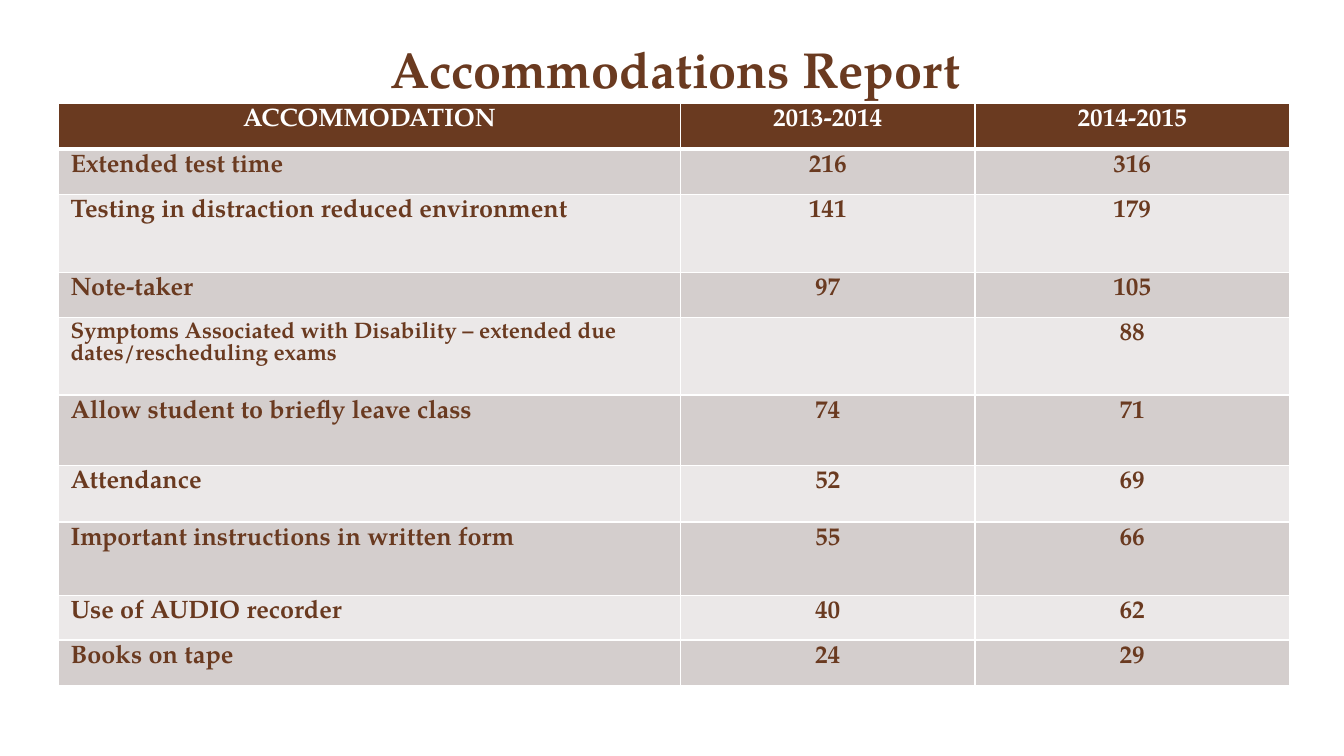
import pptx
import pptx.util
import pptx.dml.color
import pptx.enum.text
import pptx.oxml
import pptx.oxml.ns

PX = 9144  # 100 px to the inch
FONT = "TeX Gyre Pagella"
HUES = {"brown": "6A3A20", "white": "FFFFFF", "dark": "D4CECD", "light": "EBE8E8"}
ALIGN = pptx.enum.text.PP_ALIGN

COLS = [617, 292, 312]
# Row height, then the three cells
ROWS = [
    (45, "ACCOMMODATION", "2013-2014", "2014-2015"),
    (45, "Extended test time", "216", "316"),
    (77, "Testing in distraction reduced environment", "141", "179"),
    (45, "Note-taker", "97", "105"),
    (77, "Symptoms Associated with Disability – extended due dates/rescheduling exams",
     "", "88"),
    (70, "Allow student to briefly leave class", "74", "71"),
    (56, "Attendance", "52", "69"),
    (73, "Important instructions in written form", "55", "66"),
    (44, "Use of AUDIO recorder", "40", "62"),
    (45, "Books on tape", "24", "29"),
]


def px(n):
    return pptx.util.Emu(n * PX)


def hue(name):
    return pptx.dml.color.RGBColor.from_string(HUES[name])


def style(para, size, color, align):
    para.alignment = align
    font = para.font
    font.name, font.size, font.bold = FONT, pptx.util.Pt(size), True
    font.color.rgb = hue(color)


def rule(cell, top, bottom):
    """Draw white cell borders, with widths in points above and below."""
    props = cell._tc.get_or_add_tcPr()
    for side, width in (("L", 1), ("R", 1), ("T", top), ("B", bottom)):
        props.append(pptx.oxml.parse_xml(
            f'<a:ln{side} {pptx.oxml.ns.nsdecls("a")} w="{pptx.util.Pt(width)}">'
            f'<a:solidFill><a:srgbClr val="{HUES["white"]}"/></a:solidFill>'
            f'</a:ln{side}>'))


def add_title(slide, x, y, w, h):
    box = slide.shapes.add_textbox(px(x), px(y), px(w), px(h))
    frame = box.text_frame
    frame.word_wrap = True
    frame.vertical_anchor = pptx.enum.text.MSO_ANCHOR.BOTTOM
    frame.margin_top = frame.margin_bottom = px(5)
    frame.text = "Accommodations Report"
    style(frame.paragraphs[0], 36, "brown", ALIGN.CENTER)


def fill_cell(cell, text, r, c):
    head = r == 0
    rule(cell, 3 if r == 1 else 1, 3 if head else 1)
    cell.fill.solid()
    cell.fill.fore_color.rgb = hue("brown" if head else "dark" if r % 2 else "light")
    cell.margin_left = cell.margin_right = px(12)
    cell.margin_top = cell.margin_bottom = px(5)
    cell.text = text
    # The longest label is set smaller
    style(cell.text_frame.paragraphs[0], 16 if len(text) > 50 else 18,
          "white" if head else "brown", ALIGN.CENTER if head or c else ALIGN.LEFT)


def add_report(slide, x, y):
    high = sum(row[0] for row in ROWS)
    table = slide.shapes.add_table(
        len(ROWS), len(COLS), px(x), px(y), px(sum(COLS)), px(high)).table
    for col, width in zip(table.columns, COLS):
        col.width = px(width)
    for r, (height, *texts) in enumerate(ROWS):
        table.rows[r].height = px(height)
        for c, text in enumerate(texts):
            fill_cell(table.cell(r, c), text, r, c)


def main():
    deck = pptx.Presentation()
    deck.slide_width, deck.slide_height = px(1333), px(750)
    slide = deck.slides.add_slide(deck.slide_layouts[6])
    add_report(slide, 58, 103)
    add_title(slide, 41, 30, 1258, 73)
    deck.save("out.pptx")


if __name__ == "__main__":
    main()
